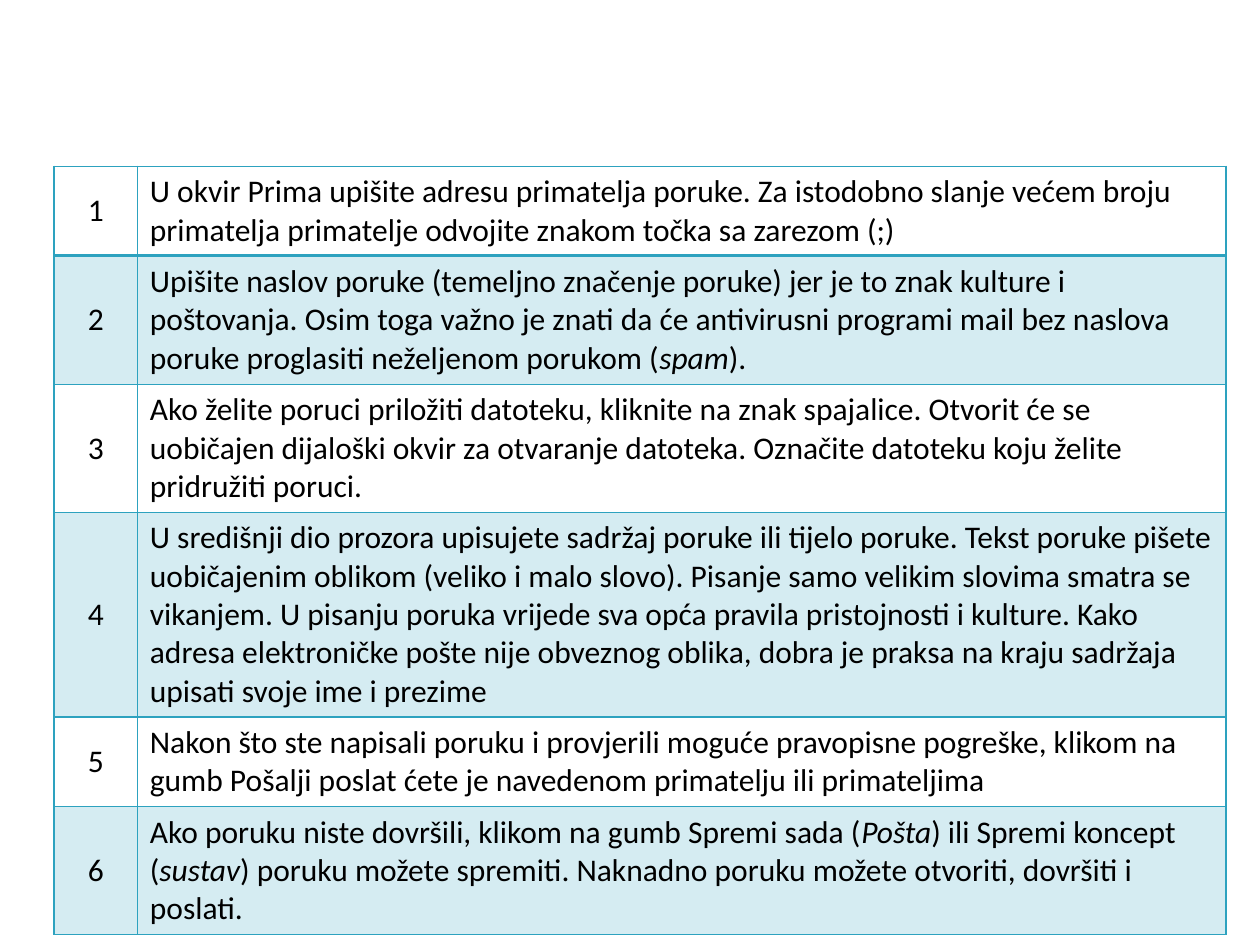
"""Build a slide with a table of six steps for sending an e-mail message."""
from lxml.etree import SubElement
from pptx import Presentation
from pptx.dml.color import RGBColor
from pptx.enum.text import MSO_ANCHOR as Anchor, PP_ALIGN as Align
from pptx.oxml import parse_xml
from pptx.oxml.ns import nsdecls, qn
from pptx.util import Inches, Pt

TEAL = RGBColor(0x2D, 0xA2, 0xBF)
BLACK = RGBColor(0, 0, 0)
FONT = {"name": "Calibri", "size": Pt(18), "bold": False}
COLUMNS = [0.66, 8.64]
LEFT, TOP = 0.43, 1.32
BAND_ALPHA = 20

STEPS = [
    (0.69, ["U okvir Prima upišite adresu primatelja poruke. Za istodobno slanje većem broju "
            "primatelja primatelje odvojite znakom točka sa zarezom (;)"]),
    (1.02, ["Upišite naslov poruke (temeljno značenje poruke) jer je to znak kulture i "
            "poštovanja. Osim toga važno je znati da će antivirusni programi mail bez naslova "
            "poruke proglasiti neželjenom porukom (", "spam", ")."]),
    (0.79, ["Ako želite poruci priložiti datoteku, kliknite na znak spajalice. Otvorit će se "
            "uobičajen dijaloški okvir za otvaranje datoteka. Označite datoteku koju želite "
            "pridružiti poruci."]),
    (1.57, ["U središnji dio prozora upisujete sadržaj poruke ili tijelo poruke. Tekst poruke "
            "pišete uobičajenim oblikom (veliko i malo slovo). Pisanje samo velikim slovima "
            "smatra se vikanjem. U pisanju poruka vrijede sva opća pravila pristojnosti i "
            "kulture. Kako adresa elektroničke pošte nije obveznog oblika, dobra je praksa na "
            "kraju sadržaja upisati svoje ime i prezime"]),
    (0.68, ["Nakon što ste napisali poruku i provjerili moguće pravopisne pogreške, klikom na "
            "gumb Pošalji poslat ćete je navedenom primatelju ili primateljima"]),
    (0.79, ["Ako poruku niste dovršili, klikom na gumb Spremi sada (", "Pošta",
            ") ili Spremi koncept (", "sustav",
            ") poruku možete spremiti. Naknadno poruku možete otvoriti, dovršiti i poslati."]),
]


def write(cell, parts, align, anchor):
    cell.vertical_anchor = anchor
    p = cell.text_frame.paragraphs[0]
    p.alignment = align
    for i, text in enumerate(parts):
        r = p.add_run()
        r.text = text
        for name, value in FONT.items():
            setattr(r.font, name, value)
        r.font.italic = i % 2 == 1
        r.font.color.rgb = BLACK


def shade(cell, banded):
    if not banded:
        cell.fill.background()
        return
    cell.fill.solid()
    cell.fill.fore_color.rgb = TEAL
    color = cell._tc.tcPr.find(".//" + qn("a:srgbClr"))
    SubElement(color, qn("a:alpha"), val=str(BAND_ALPHA * 1000))


def border(cell, widths):
    for i, (side, width) in enumerate(widths.items()):
        cell._tc.tcPr.insert(i, parse_xml(
            f'<a:ln{side} {nsdecls("a")} w="{Pt(width)}"><a:solidFill>'
            f'<a:srgbClr val="{TEAL}"/></a:solidFill></a:ln{side}>'))


def main():
    prs = Presentation()
    prs.slide_width, prs.slide_height = Inches(10), Inches(7.5)
    s = prs.slides.add_slide(prs.slide_layouts[6])
    height = sum(h for h, _ in STEPS)
    table = s.shapes.add_table(len(STEPS), len(COLUMNS), Inches(LEFT), Inches(TOP),
                               Inches(sum(COLUMNS)), Inches(height)).table
    table.first_row = table.horz_banding = False
    for column, width in zip(table.columns, COLUMNS):
        column.width = Inches(width)
    for i, (row_height, parts) in enumerate(STEPS):
        row = table.rows[i]
        row.height = Inches(row_height)
        number, step = row.cells
        write(number, [str(i + 1)], Align.CENTER, Anchor.MIDDLE)
        write(step, parts, Align.LEFT, Anchor.TOP)
        for cell in row.cells:
            shade(cell, i % 2 == 1)
            border(cell, {"L": 1, "R": 1, "T": 2 if i == 1 else 1, "B": 2 if i == 0 else 1})
    prs.save("out.pptx")


if __name__ == "__main__":
    main()
